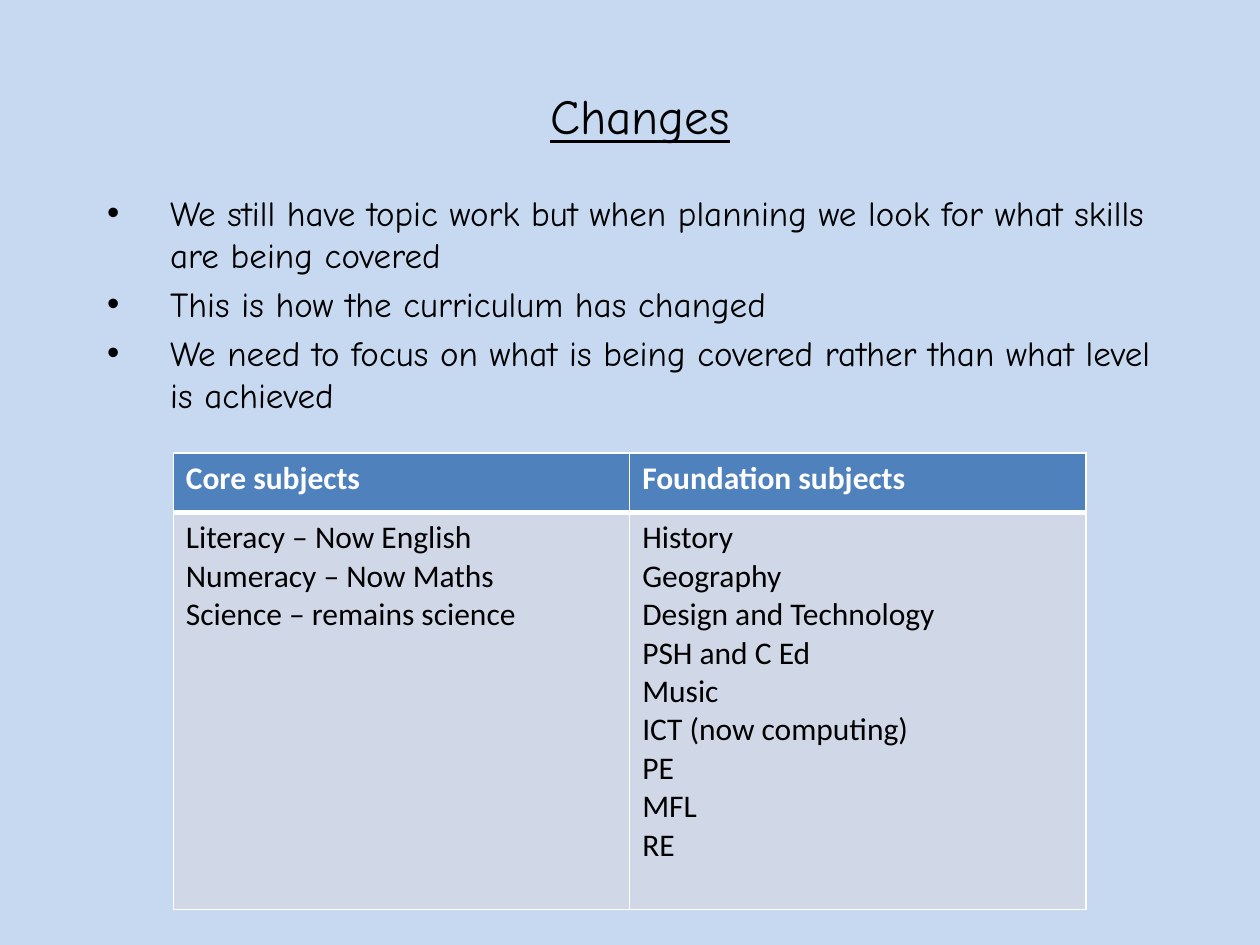
from lxml.etree import SubElement
from pptx import Presentation
from pptx.dml.color import RGBColor
from pptx.enum.text import MSO_ANCHOR as Anchor, MSO_AUTO_SIZE as AutoSize, PP_ALIGN as Align
from pptx.oxml.ns import qn
from pptx.util import Pt

# Content
TITLE = "Changes"
POINTS = [
    "We still have topic work but when planning we look for what skills are being covered",
    "This is how the curriculum has changed",
    "We need to focus on what is being covered rather than what level is achieved",
]
SUBJECTS = {
    "Core subjects": [
        "Literacy – Now English", "Numeracy – Now Maths", "Science – remains science",
    ],
    "Foundation subjects": [
        "History", "Geography", "Design and Technology", "PSH and C Ed", "Music",
        "ICT (now computing)", "PE", "MFL", "RE",
    ],
}

# Style
COLORS = {"background": "C6D9F1", "header": "4F81BD", "body": "D0D8E8",
          "text": "000000", "white": "FFFFFF"}
TEXT_FONT, TABLE_FONT = "Comic Neue", "Calibri"
TABLE_LEFT, TABLE_TOP, COLUMN_WIDTH = 99, 258.8, 260.8
ROW_HEIGHTS = (34, 226.8)


def color(name):
    return RGBColor.from_string(COLORS[name])


def format_font(font, name, size, color_name="text", bold=False):
    font.name, font.size, font.bold = name, Pt(size), bold
    font.color.rgb = color(color_name)


def place(shape, left, top, width, height):
    shape.left, shape.top, shape.width, shape.height = map(Pt, (left, top, width, height))
    shape.text_frame.auto_size = AutoSize.NONE


def set_bullet(paragraph, indent):
    properties = paragraph._p.get_or_add_pPr()
    properties.set("marL", str(Pt(indent)))
    properties.set("indent", str(-Pt(indent)))
    SubElement(properties, qn("a:buFont"), typeface="Arial")
    SubElement(properties, qn("a:buChar"), char="•")


def set_borders(cell, widths):
    """Widths are left, right, top and bottom; call before the cell is filled."""
    properties = cell._tc.get_or_add_tcPr()
    for tag, width in zip(("a:lnL", "a:lnR", "a:lnT", "a:lnB"), widths):
        line = SubElement(properties, qn(tag), w=str(Pt(width)))
        fill = SubElement(line, qn("a:solidFill"))
        SubElement(fill, qn("a:srgbClr"), val=COLORS["white"])


def fill_cell(cell, lines, fill_name, text_name, bold, borders):
    set_borders(cell, borders)
    cell.fill.solid()
    cell.fill.fore_color.rgb = color(fill_name)
    cell.text = "\n".join(lines)
    for paragraph in cell.text_frame.paragraphs:
        format_font(paragraph.font, TABLE_FONT, 18, text_name, bold)


presentation = Presentation()
presentation.slide_width, presentation.slide_height = Pt(720), Pt(540)
slide = presentation.slides.add_slide(presentation.slide_layouts[1])
slide.background.fill.solid()
slide.background.fill.fore_color.rgb = color("background")

# Title
title = slide.shapes.title
place(title, 65.5, 43.2, 600.5, 45.4)
title.text_frame.text = TITLE
title.text_frame.vertical_anchor = Anchor.MIDDLE
heading = title.text_frame.paragraphs[0]
heading.alignment = Align.CENTER
format_font(heading.font, TEXT_FONT, 28)
heading.font.underline = True

# Bulleted points
body = slide.placeholders[1]
place(body, 54, 105.8, 612, 344.2)
body.text_frame.text = "\n".join(POINTS)
for index, paragraph in enumerate(body.text_frame.paragraphs):
    paragraph.space_before = Pt(4 if index else 0)
    set_bullet(paragraph, 36)
    format_font(paragraph.font, TEXT_FONT, 20)

# Subject table
table = slide.shapes.add_table(
    2, len(SUBJECTS), Pt(TABLE_LEFT), Pt(TABLE_TOP),
    Pt(COLUMN_WIDTH * len(SUBJECTS)), Pt(sum(ROW_HEIGHTS))).table
for row, height in zip(table.rows, ROW_HEIGHTS):
    row.height = Pt(height)
for index, (header, subjects) in enumerate(SUBJECTS.items()):
    table.columns[index].width = Pt(COLUMN_WIDTH)
    fill_cell(table.cell(0, index), [header], "header", "white", True, (1, 1, 1, 3))
    fill_cell(table.cell(1, index), subjects, "body", "text", False, (1, 1, 3, 1))

presentation.save("out.pptx")
